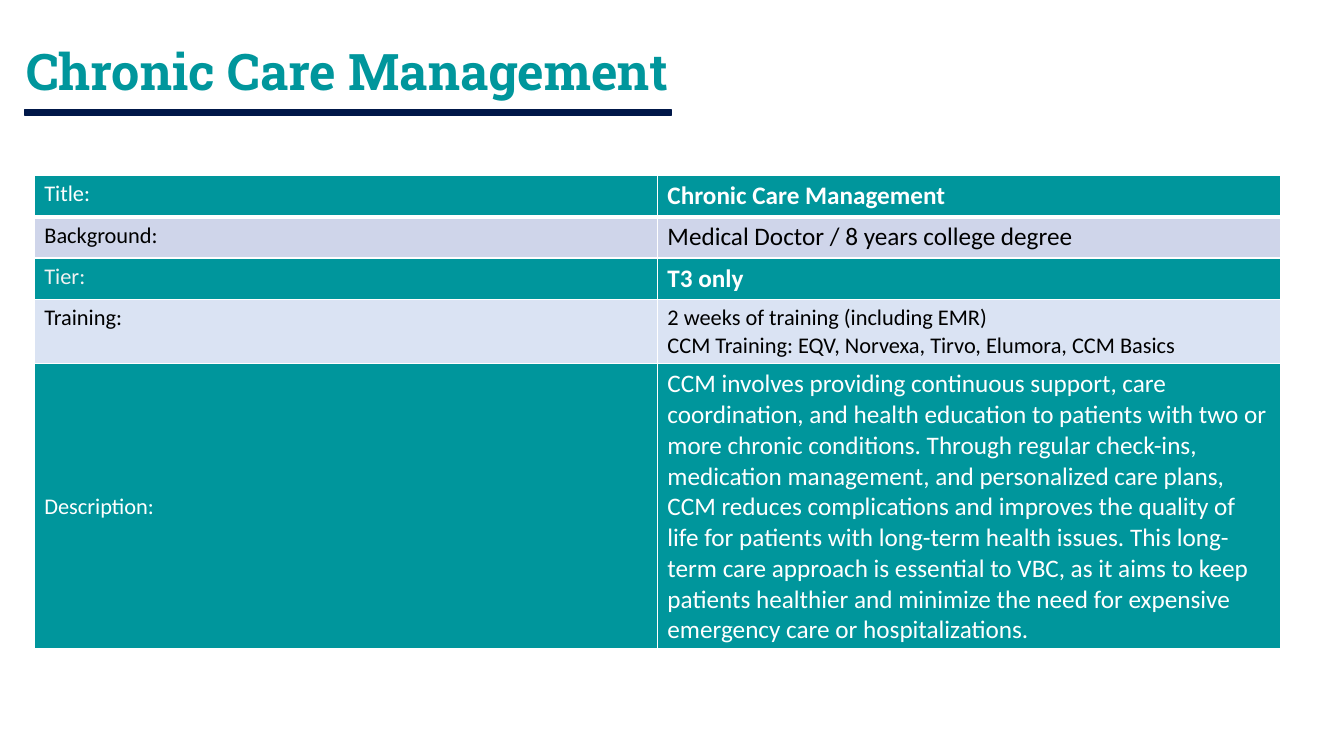
import dataclasses

import lxml.etree
import pptx
import pptx.dml.color
import pptx.enum.shapes
import pptx.enum.text
import pptx.oxml.ns
import pptx.presentation
import pptx.slide
import pptx.table
import pptx.util
from pptx.util import Inches


@dataclasses.dataclass(frozen=True)
class Theme:
    teal: str = "00969C"
    navy: str = "001749"
    lavender: str = "CFD5EA"
    pale_blue: str = "DAE3F3"
    white: str = "FFFFFF"
    off_white: str = "F2F2F2"
    black: str = "000000"
    title_font: str = "Roboto Slab"
    body_font: str = "Calibri"
    title_size: int = 36
    large_size: int = 18
    body_size: int = 16


THEME = Theme()


@dataclasses.dataclass(frozen=True)
class ProfileRow:
    label: str
    lines: tuple[str, ...]
    height: float
    fill: str
    label_color: str
    value_color: str
    value_size: int = THEME.large_size
    value_bold: bool = False
    label_anchor: pptx.enum.text.MSO_ANCHOR = pptx.enum.text.MSO_ANCHOR.TOP


DESCRIPTION = (
    "CCM involves providing continuous support, care coordination, and health "
    "education to patients with two or more chronic conditions. Through regular "
    "check-ins, medication management, and personalized care plans, CCM reduces "
    "complications and improves the quality of life for patients with long-term "
    "health issues. This long-term care approach is essential to VBC, as it aims "
    "to keep patients healthier and minimize the need for expensive emergency "
    "care or hospitalizations."
)

ROWS = (
    ProfileRow("Title:", ("Chronic Care Management",), 0.41,
               THEME.teal, THEME.white, THEME.white, value_bold=True),
    ProfileRow("Background:", ("Medical Doctor / 8 years college degree",), 0.41,
               THEME.lavender, THEME.black, THEME.black),
    ProfileRow("Tier:", ("T3 only",), 0.41,
               THEME.teal, THEME.off_white, THEME.white, value_bold=True),
    ProfileRow("Training:",
               ("2 weeks of training (including EMR)",
                "CCM Training: EQV, Norvexa, Tirvo, Elumora, CCM Basics"), 0.64,
               THEME.pale_blue, THEME.black, THEME.black, value_size=THEME.body_size),
    ProfileRow("Description:", (DESCRIPTION,), 2.83,
               THEME.teal, THEME.white, THEME.white,
               label_anchor=pptx.enum.text.MSO_ANCHOR.MIDDLE),
)


def rgb(color: str) -> pptx.dml.color.RGBColor:
    return pptx.dml.color.RGBColor.from_string(color)


def write_text(frame, lines: tuple[str, ...], font: str, size: int,
               color: str, bold: bool) -> None:
    frame.text = "\n".join(lines)
    for paragraph in frame.paragraphs:
        paragraph.font.name = font
        paragraph.font.size = pptx.util.Pt(size)
        paragraph.font.color.rgb = rgb(color)
        paragraph.font.bold = bold


def add_title(page: pptx.slide.Slide, text: str) -> None:
    box = page.shapes.add_textbox(Inches(0.16), Inches(0), Inches(7.02), Inches(1.48))
    frame = box.text_frame
    frame.word_wrap = True
    frame.vertical_anchor = pptx.enum.text.MSO_ANCHOR.MIDDLE
    write_text(frame, (text,), THEME.title_font, THEME.title_size, THEME.teal, True)
    frame.paragraphs[0].line_spacing = 0.9


def add_underline(page: pptx.slide.Slide) -> None:
    bar = page.shapes.add_shape(pptx.enum.shapes.MSO_SHAPE.RECTANGLE,
                                Inches(0.24), Inches(1.09), Inches(6.42), Inches(0.05))
    bar.shadow.inherit = False
    bar.fill.solid()
    bar.fill.fore_color.rgb = rgb(THEME.navy)
    bar.line.color.rgb = rgb(THEME.navy)
    bar.line.width = pptx.util.Pt(1)


def set_borders(cell: pptx.table._Cell, top: int, bottom: int) -> None:
    """Draw white cell borders; border elements must precede the fill."""
    qualified = pptx.oxml.ns.qn
    properties = cell._tc.get_or_add_tcPr()
    widths = {"a:lnL": 1, "a:lnR": 1, "a:lnT": top, "a:lnB": bottom}
    for position, (tag, width) in enumerate(widths.items()):
        border = lxml.etree.Element(qualified(tag), w=str(pptx.util.Pt(width)))
        fill = lxml.etree.SubElement(border, qualified("a:solidFill"))
        lxml.etree.SubElement(fill, qualified("a:srgbClr"), val=THEME.white)
        properties.insert(position, border)


def add_profile_table(page: pptx.slide.Slide, rows: tuple[ProfileRow, ...]) -> None:
    total_height = sum(row.height for row in rows)
    table = page.shapes.add_table(len(rows), 2, Inches(0.34), Inches(1.74),
                                  Inches(12.36), Inches(total_height)).table
    table.first_row = False
    table.horz_banding = False
    for index, row in enumerate(rows):
        table.rows[index].height = Inches(row.height)
        label, value = table.rows[index].cells
        for cell in (label, value):
            cell.fill.solid()
            cell.fill.fore_color.rgb = rgb(row.fill)
            # The heading row is set off by a thicker rule
            set_borders(cell, top=3 if index == 1 else 1, bottom=3 if index == 0 else 1)
        label.vertical_anchor = row.label_anchor
        write_text(label.text_frame, (row.label,), THEME.body_font,
                   THEME.body_size, row.label_color, False)
        write_text(value.text_frame, row.lines, THEME.body_font,
                   row.value_size, row.value_color, row.value_bold)


def main() -> None:
    deck = pptx.Presentation()
    deck.slide_width = Inches(13.33)
    deck.slide_height = Inches(7.5)
    page = deck.slides.add_slide(deck.slide_layouts[6])

    # Heading with its rule
    add_title(page, "Chronic Care Management")
    add_underline(page)

    # Role profile
    add_profile_table(page, ROWS)

    deck.save("out.pptx")


if __name__ == "__main__":
    main()
